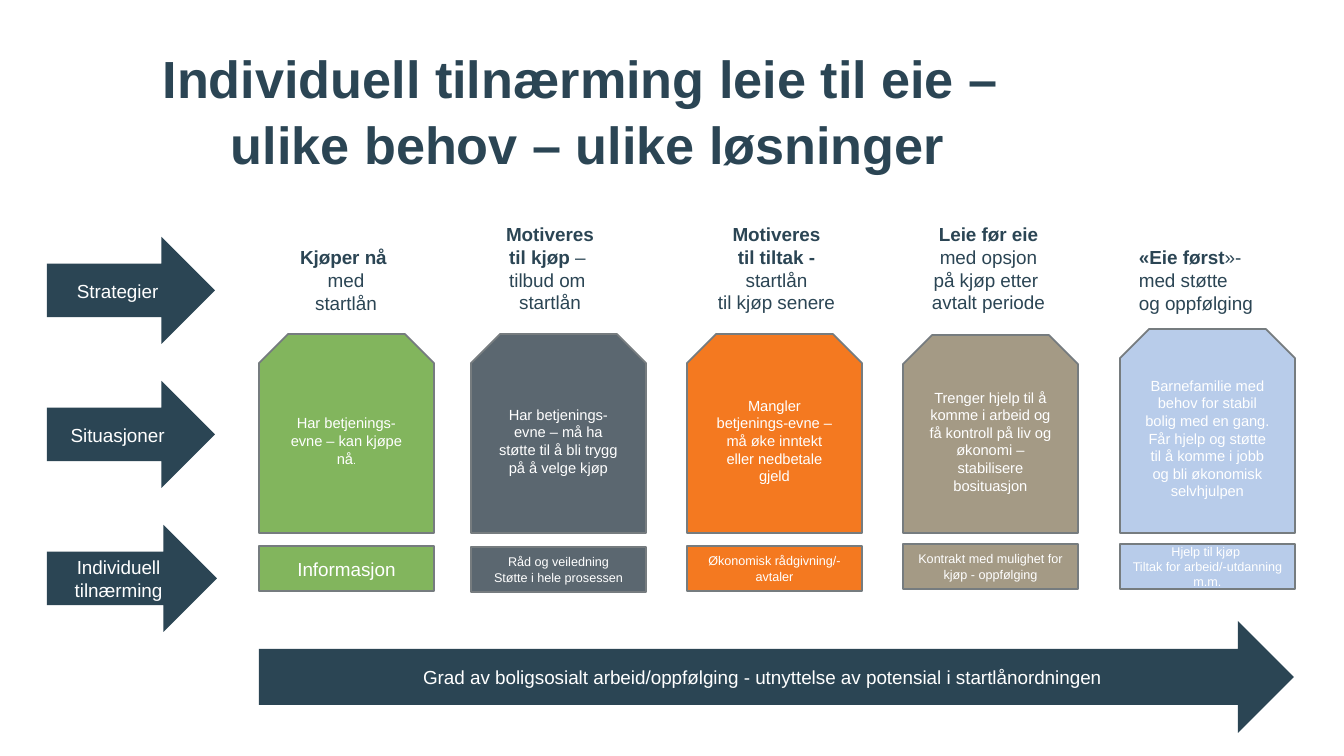
from pptx import Presentation
from pptx import util as u
from pptx.dml.color import RGBColor
from pptx.enum import shapes, text

NAVY = RGBColor(0x2B, 0x45, 0x54)
WHITE = RGBColor(0xFF, 0xFF, 0xFF)
EDGE = RGBColor(0x76, 0x7C, 0x7F)
GREEN = RGBColor(0x82, 0xB5, 0x5D)
SLATE = RGBColor(0x5B, 0x67, 0x70)
ORANGE = RGBColor(0xF4, 0x79, 0x20)
SAND = RGBColor(0xA4, 0x9A, 0x85)
SKY = RGBColor(0xB8, 0xCC, 0xEA)

CENTER, LEFT = text.PP_ALIGN.CENTER, text.PP_ALIGN.LEFT
ARROW = shapes.MSO_SHAPE.RIGHT_ARROW
SNIPPED = shapes.MSO_SHAPE.SNIP_2_SAME_RECTANGLE
RECTANGLE = shapes.MSO_SHAPE.RECTANGLE
FONT = "Arial"
BODY, SITUATION, SMALL = 13.5, 10.5, 9

TITLE = ["Individuell tilnærming leie til eie – ", "ulike behov – ulike løsninger"]
ROWS = [("Strategier", 168), ("Situasjoner", 168), ("Individuell tilnærming", 170)]
SCALE_LABEL = "Grad av boligsosialt arbeid/oppfølging - utnyttelse av potensial i startlånordningen"

COLUMNS = [
    dict(color=GREEN, left=259, top=334, action_top=546, action_size=BODY,
         heading_at=(289, 114), align=CENTER,
         heading=[[("Kjøper nå ", True)], [("med", False)], [("startlån", False)]],
         situation=[("Har betjenings-evne – kan kjøpe nå", SITUATION), (".", 7.5)],
         action=["Informasjon"]),
    dict(color=SLATE, left=471, top=334, action_top=547, action_size=SMALL,
         heading_at=(495, 110), align=CENTER,
         heading=[[("Motiveres", True)], [("til kjøp", True), (" – ", False)],
                  [("tilbud om ", False)], [("startlån", False)]],
         situation=[("Har betjenings-evne – må ha støtte til å bli trygg på å velge kjøp", SITUATION)],
         action=["Råd og veiledning", "Støtte i hele prosessen"]),
    dict(color=ORANGE, left=687, top=334, action_top=546, action_size=SMALL,
         heading_at=(707, 139), align=CENTER,
         heading=[[("Motiveres", True)], [("til tiltak -", True)],
                  [("startlån", False)], [("til kjøp senere", False)]],
         situation=[("Mangler betjenings-evne – må øke inntekt eller nedbetale gjeld", SITUATION)],
         action=["Økonomisk rådgivning/-avtaler"]),
    dict(color=SAND, left=903, top=335, action_top=544, action_size=SMALL,
         heading_at=(921, 135), align=CENTER,
         heading=[[("Leie før eie", True)], [("med opsjon", False)],
                  [("på kjøp etter ", False)], [("avtalt periode", False)]],
         situation=[("Trenger hjelp til å komme i arbeid og få kontroll på liv og økonomi – "
                     "stabilisere bosituasjon", SITUATION)],
         action=["Kontrakt med mulighet for kjøp - oppfølging"]),
    dict(color=SKY, left=1120, top=329, action_top=544, action_size=SMALL,
         heading_at=(1129, 136), align=LEFT,
         heading=[[("«Eie først", True), ("»-", False)],
                  [("med støtte", False)], [("og oppfølging", False)]],
         situation=[("Barnefamilie med behov for stabil bolig med en gang. Får hjelp og støtte "
                     "til å komme i jobb og bli økonomisk selvhjulpen", SITUATION)],
         action=["Hjelp til kjøp ", "Tiltak for arbeid/-utdanning m.m."]),
]
COLUMN_WIDTH, SITUATION_BOTTOM, ACTION_HEIGHT = 175, 533, 45
HEADING_BOTTOM, HEADING_LINE, HEADING_PADDING = 320, 23, 10
ROW_LEFT, ROW_TOP, ROW_STEP, ROW_HEIGHT = 47, 237, 144, 107


def px(value):
    return u.Emu(round(value * 914400 / 100.8))


def add_span(para, words, size, color, bold=False):
    span = para.add_run()
    span.text = words
    span.font.name = FONT
    span.font.size = u.Pt(size)
    span.font.bold = bold
    span.font.color.rgb = color


def write(frame, paragraphs, color, align=CENTER):
    for index, spans in enumerate(paragraphs):
        para = frame.add_paragraph() if index else frame.paragraphs[0]
        para.alignment = align
        for words, size, bold in spans:
            add_span(para, words, size, color, bold)


def add_block(page, kind, area, fill, paragraphs, outlined=False):
    block = page.shapes.add_shape(kind, *map(px, area))
    block.shadow.inherit = False
    block.fill.solid()
    block.fill.fore_color.rgb = fill
    if outlined:
        block.line.color.rgb = EDGE
        block.line.width = u.Pt(1.25)
    else:
        block.line.fill.background()
    frame = block.text_frame
    frame.word_wrap = True
    frame.vertical_anchor = text.MSO_ANCHOR.MIDDLE
    write(frame, paragraphs, WHITE)


def add_title(page):
    box = page.shapes.add_textbox(*map(px, (68, 38, 1040, 110)))
    box.text_frame.word_wrap = True
    para = box.text_frame.paragraphs[0]
    para.alignment = CENTER
    para.line_spacing = 1.05
    add_span(para, TITLE[0], 37.3, NAVY, True)
    para.add_line_break()
    add_span(para, TITLE[1], 37.3, NAVY, True)


def add_column(page, column):
    left, top = column["left"], column["top"]
    add_block(page, SNIPPED, (left, top, COLUMN_WIDTH, SITUATION_BOTTOM - top), column["color"],
              [[(words, size, False) for words, size in column["situation"]]], True)
    add_block(page, RECTANGLE, (left, column["action_top"], COLUMN_WIDTH, ACTION_HEIGHT),
              column["color"],
              [[(line, column["action_size"], False)] for line in column["action"]], True)
    heading_left, width = column["heading_at"]
    height = len(column["heading"]) * HEADING_LINE + HEADING_PADDING
    box = page.shapes.add_textbox(*map(px, (heading_left, HEADING_BOTTOM - height, width, height)))
    box.text_frame.word_wrap = False
    write(box.text_frame,
          [[(words, BODY, bold) for words, bold in line] for line in column["heading"]],
          NAVY, column["align"])


def main():
    deck = Presentation()
    deck.slide_width, deck.slide_height = px(1344), px(756)
    page = deck.slides.add_slide(deck.slide_layouts[6])
    add_title(page)
    add_block(page, ARROW, (259, 621, 1035, 112), NAVY, [[(SCALE_LABEL, BODY, False)]])
    for column in COLUMNS:
        add_column(page, column)
    for index, (label, width) in enumerate(ROWS):
        add_block(page, ARROW, (ROW_LEFT, ROW_TOP + index * ROW_STEP, width, ROW_HEIGHT),
                  NAVY, [[(label, BODY, False)]])
    deck.save("out.pptx")


if __name__ == "__main__":
    main()
